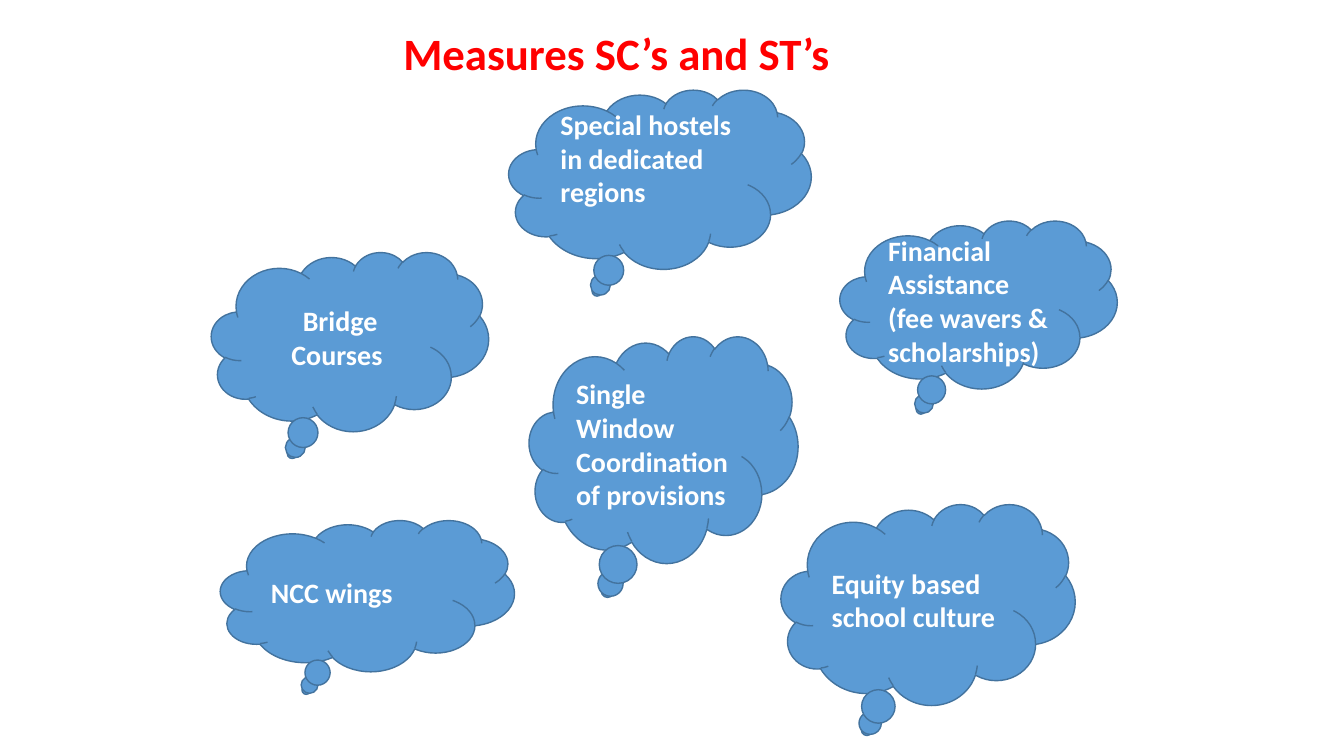
from dataclasses import dataclass

from pptx import Presentation
from pptx.dml.color import RGBColor
from pptx.enum.shapes import MSO_SHAPE
from pptx.enum.text import MSO_ANCHOR, MSO_AUTO_SIZE, PP_ALIGN
from pptx.util import Pt

# Content: text, (left, top, width, height) in points, alignment, space below text
TITLE = "Measures SC’s and ST’s "
TITLE_BOX = (198, 14.4, 492, 46)
MEASURES = [
    ("Single Window Coordination of provisions", (378, 240, 192, 162), PP_ALIGN.LEFT, 0),
    ("NCC wings", (157.5, 371.5, 210, 108), PP_ALIGN.LEFT, 0),
    ("Equity based school culture", (558, 360, 210, 143.5), PP_ALIGN.LEFT, 0),
    ("Bridge Courses ", (151, 180, 198, 128), PP_ALIGN.CENTER, 0),
    ("Special hostels in dedicated regions", (363.5, 64, 216, 128), PP_ALIGN.LEFT, 24),
    ("Financial Assistance (fee wavers & scholarships)", (600, 157.5, 198, 120), PP_ALIGN.LEFT, 0),
]


@dataclass(frozen=True)
class Theme:
    font: str = "Calibri"
    title_size: int = 32
    cloud_size: int = 20
    title: RGBColor = RGBColor(0xFF, 0x00, 0x00)
    cloud: RGBColor = RGBColor(0x5B, 0x9B, 0xD5)
    outline: RGBColor = RGBColor(0x43, 0x73, 0x9E)
    cloud_text: RGBColor = RGBColor(0xFF, 0xFF, 0xFF)


THEME = Theme()


def write(frame, text, size, color, align):
    frame.text = text
    frame.word_wrap = True
    frame.auto_size = MSO_AUTO_SIZE.NONE
    frame.vertical_anchor = MSO_ANCHOR.MIDDLE
    paragraph = frame.paragraphs[0]
    paragraph.alignment = align
    font = paragraph.font
    font.name, font.size, font.bold = THEME.font, Pt(size), True
    font.color.rgb = color


def add_cloud(slide, text, box, align, space_below):
    cloud = slide.shapes.add_shape(MSO_SHAPE.CLOUD_CALLOUT, *map(Pt, box))
    cloud.shadow.inherit = False
    cloud.fill.solid()
    cloud.fill.fore_color.rgb = THEME.cloud
    cloud.line.color.rgb = THEME.outline
    cloud.line.width = Pt(1)
    write(cloud.text_frame, text, THEME.cloud_size, THEME.cloud_text, align)
    cloud.text_frame.margin_bottom = Pt(3.6 + space_below)


def main():
    deck = Presentation()
    deck.slide_width, deck.slide_height = Pt(960), Pt(540)
    slide = deck.slides.add_slide(deck.slide_layouts[5])

    # Title
    title = slide.shapes.title
    title.left, title.top, title.width, title.height = map(Pt, TITLE_BOX)
    write(title.text_frame, TITLE, THEME.title_size, THEME.title, PP_ALIGN.CENTER)

    # Thought clouds
    for measure in MEASURES:
        add_cloud(slide, *measure)

    deck.save("out.pptx")


if __name__ == "__main__":
    main()
